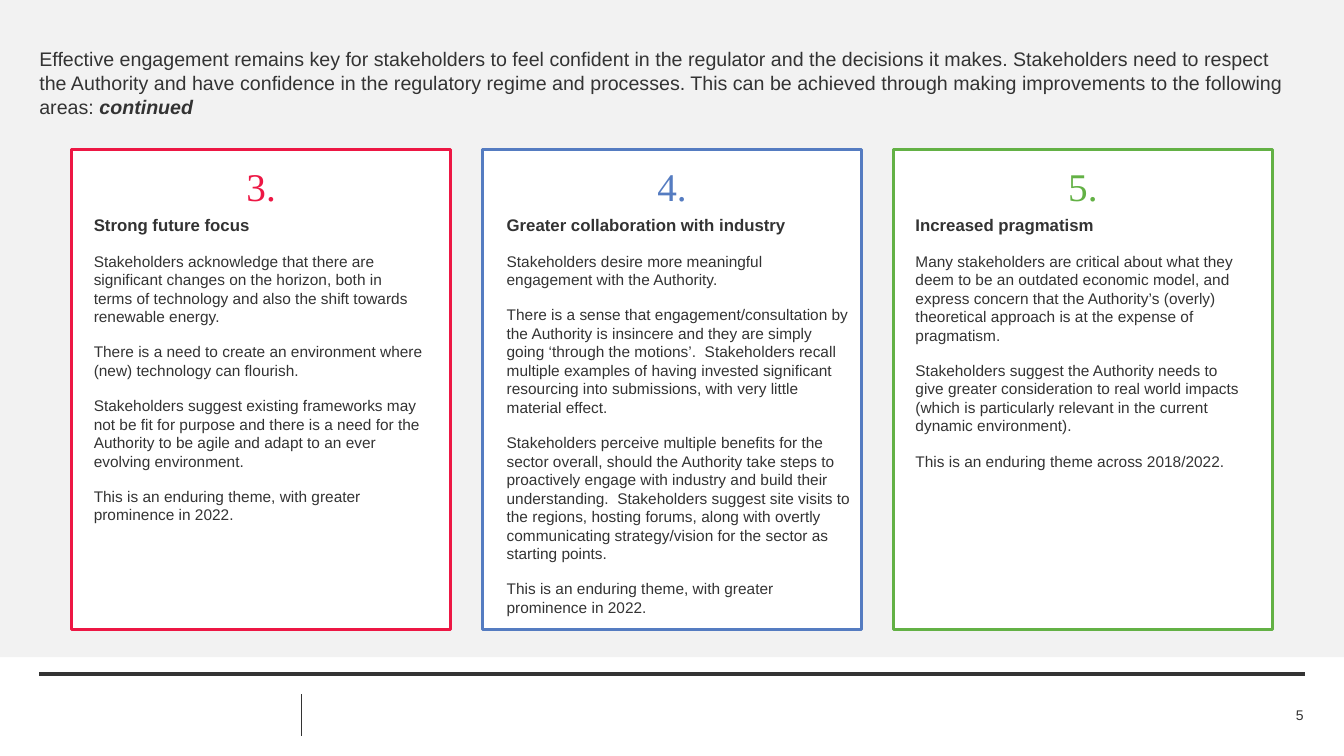
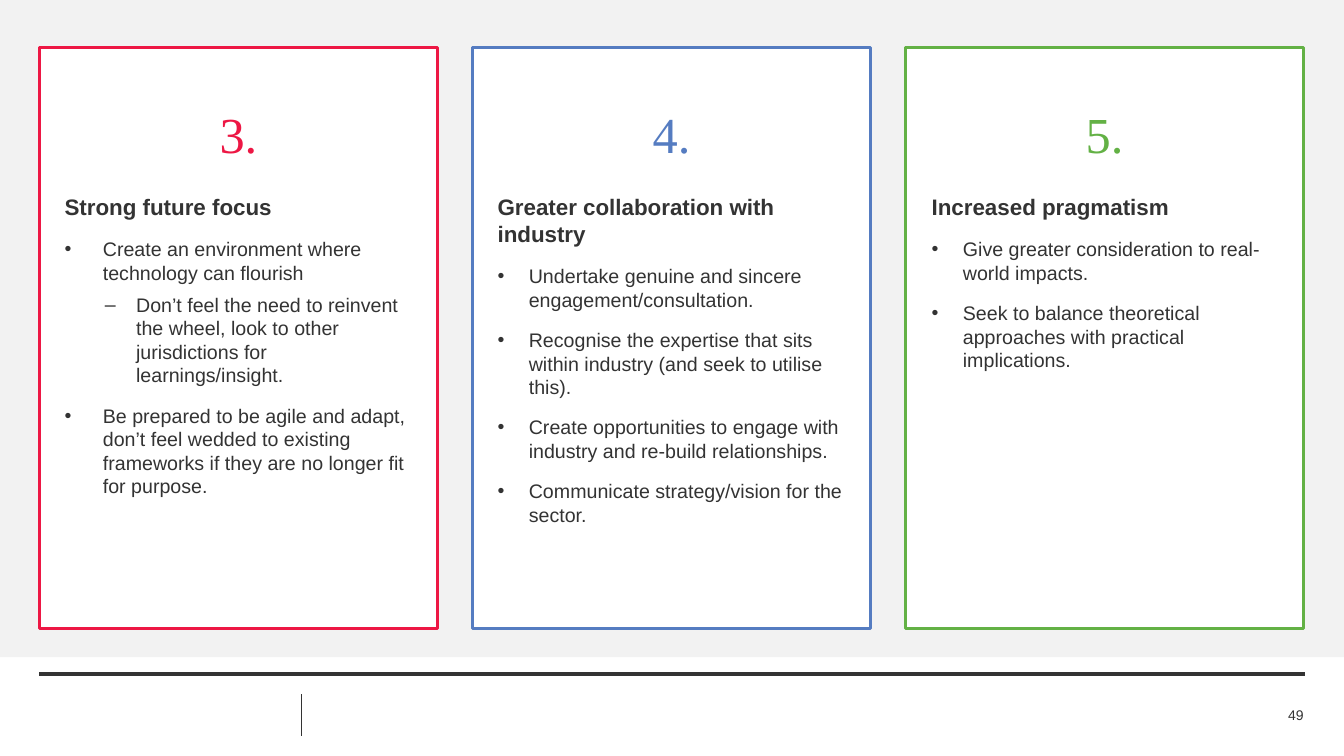
from dataclasses import dataclass
from lxml import etree
from pptx import Presentation
from pptx.dml.color import RGBColor
from pptx.enum import shapes, text
from pptx.oxml import ns
from pptx.util import Inches, Pt


@dataclass(frozen=True)
class Theme:
    ink: str = "333333"
    paper: str = "FFFFFF"
    band: str = "F2F2F2"
    accents: tuple = ("ED1744", "557CC1", "63B145")
    sans: str = "Arial"
    serif: str = "Times New Roman"
    intro_size: int = 14
    page_size: int = 10


THEME = Theme()
NUMBERS = ("3.", "4.", "5.")
HEADINGS = ("Strong future focus", "Greater collaboration with industry", "Increased pragmatism")
PLAIN, BULLET, WIDE_BULLET, DASH = "plain", "bullet", "wide bullet", "dash"
LIST_STYLES = {
    PLAIN: dict(margin=0, hang=0, mark=None, level=0, before=12),
    BULLET: dict(margin=0.31, hang=0.31, mark="•", level=0, before=12),
    WIDE_BULLET: dict(margin=0.38, hang=0.38, mark="•", level=0, before=12),
    DASH: dict(margin=0.71, hang=0.31, mark="‒", level=1, before=6),
}

INTRO = (
    "Effective engagement remains key for stakeholders to feel confident in the regulator and the "
    "decisions it makes. Stakeholders need to respect the Authority and have confidence in the "
    "regulatory regime and processes. This can be achieved through making improvements to the "
    "following areas: "
)
INTRO_END = "continued"
ENDURING = "This is an enduring theme, with greater prominence in 2022."

FINDINGS = [
    [
        (PLAIN, "Stakeholders acknowledge that there are significant changes on the horizon, both in "
                "terms of technology and also the shift towards renewable energy."),
        (PLAIN, "There is a need to create an environment where (new) technology can flourish."),
        (PLAIN, "Stakeholders suggest existing frameworks may not be fit for purpose and there is a "
                "need for the Authority to be agile and adapt to an ever evolving environment."),
        (PLAIN, ENDURING),
    ],
    [
        (PLAIN, "Stakeholders desire more meaningful engagement with the Authority."),
        (PLAIN, "There is a sense that engagement/consultation by the Authority is insincere and they "
                "are simply going ‘through the motions’.  Stakeholders recall multiple examples of "
                "having invested significant resourcing into submissions, with very little material "
                "effect."),
        (PLAIN, "Stakeholders perceive multiple benefits for the sector overall, should the Authority "
                "take steps to proactively engage with industry and build their understanding.  "
                "Stakeholders suggest site visits to the regions, hosting forums, along with overtly "
                "communicating strategy/vision for the sector as starting points."),
        (PLAIN, ENDURING),
    ],
    [
        (PLAIN, "Many stakeholders are critical about what they deem to be an outdated economic model, "
                "and express concern that the Authority’s (overly) theoretical approach is at the "
                "expense of pragmatism."),
        (PLAIN, "Stakeholders suggest the Authority needs to give greater consideration to real world "
                "impacts (which is particularly relevant in the current dynamic environment)."),
        (PLAIN, "This is an enduring theme across 2018/2022."),
    ],
]

ACTIONS = [
    [
        (WIDE_BULLET, "Create an environment where technology can flourish"),
        (DASH, "Don’t feel the need to reinvent the wheel, look to other jurisdictions for "
               "learnings/insight."),
        (WIDE_BULLET, "Be prepared to be agile and adapt, don’t feel wedded to existing frameworks if "
                      "they are no longer fit for purpose."),
    ],
    [
        (BULLET, "Undertake genuine and sincere engagement/consultation."),
        (BULLET, "Recognise the expertise that sits within industry (and seek to utilise this)."),
        (BULLET, "Create opportunities to engage with industry and re-build relationships."),
        (BULLET, "Communicate strategy/vision for the sector."),
    ],
    [
        (BULLET, "Give greater consideration to real-world impacts."),
        (BULLET, "Seek to balance theoretical approaches with practical implications."),
    ],
]

SLIDES = [
    dict(page="5", intro=True, columns=FINDINGS, left=0.71, right=12.62, top=1.48,
         card=(3.76, 4.77), number=(1.56, 0.62, 0.57), body_top=2.13, body_height=4.02,
         insets=(0.22, 0.24, 0.22), body_widths=(3.27, 3.43, 3.27),
         sizes=dict(number=28, heading=12, item=11)),
    dict(page="49", intro=False, columns=ACTIONS, left=0.39, right=12.93, top=0.47,
         card=(3.95, 5.77), number=(0.97, 0.81, 0.71), body_top=1.92, body_height=3.33,
         insets=(0.25, 0.25, 0.26), body_widths=(3.43, 3.43, 3.43),
         sizes=dict(number=36, heading=16, item=14)),
]


def rgb(value):
    return RGBColor.from_string(value)


def style(paragraph, size, color=THEME.ink, face=THEME.sans, bold=False):
    font = paragraph.font
    font.name, font.size, font.bold = face, Pt(size), bold
    font.color.rgb = rgb(color)


def place(part, left, top, width, height):
    part.left, part.top = Inches(left), Inches(top)
    part.width, part.height = Inches(width), Inches(height)


def prepare(frame, anchor=text.MSO_ANCHOR.TOP):
    frame.word_wrap = True
    frame.auto_size = text.MSO_AUTO_SIZE.NONE
    frame.vertical_anchor = anchor
    frame.margin_left = frame.margin_right = frame.margin_top = frame.margin_bottom = 0


def add_panel(slide, box, fill, outline=None):
    panel = slide.shapes.add_shape(shapes.MSO_SHAPE.RECTANGLE, *map(Inches, box))
    panel.shadow.inherit = False
    panel.fill.solid()
    panel.fill.fore_color.rgb = rgb(fill)
    if outline:
        panel.line.color.rgb = rgb(outline)
        panel.line.width = Pt(2.25)
    else:
        panel.line.fill.background()
    return panel


def add_rule(slide, ends, width):
    rule = slide.shapes.add_connector(shapes.MSO_CONNECTOR.STRAIGHT, *map(Inches, ends))
    rule.line.color.rgb = rgb(THEME.ink)
    rule.line.width = Pt(width)
    etree.SubElement(rule._element.spPr, ns.qn("a:effectLst"))
    return rule


def dress_master(prs, slide):
    parts = [
        add_panel(slide, (0, 0, 13.33, 6.52), THEME.band),
        add_rule(slide, (0.39, 6.69, 12.94, 6.69), 3),
        add_rule(slide, (2.99, 6.89, 2.99, 7.3), 1),
    ]
    for position, part in enumerate(parts):
        part._element.xpath(".//p:cNvPr")[0].set("id", str(100 + position))
        prs.slide_master.shapes._spTree.insert(2 + position, part._element)


def add_label(slide, box, label, size, color, face, align):
    frame = slide.shapes.add_textbox(*map(Inches, box)).text_frame
    prepare(frame, text.MSO_ANCHOR.MIDDLE)
    paragraph = frame.paragraphs[0]
    paragraph.text, paragraph.alignment = label, align
    style(paragraph, size, color, face)


def write_item(paragraph, kind, words, size, bold=False, first=False):
    rule = LIST_STYLES[kind]
    paragraph.text, paragraph.level = words, rule["level"]
    props = paragraph._p.get_or_add_pPr()
    props.set("marL", str(Inches(rule["margin"])))
    props.set("indent", str(-Inches(rule["hang"])))
    if rule["mark"]:
        etree.SubElement(props, ns.qn("a:buFont")).set("typeface", THEME.sans)
        etree.SubElement(props, ns.qn("a:buChar")).set("char", rule["mark"])
    else:
        etree.SubElement(props, ns.qn("a:buNone"))
    paragraph.alignment = text.PP_ALIGN.LEFT
    paragraph.space_before = Pt(0 if first else rule["before"])
    style(paragraph, size, bold=bold)


def write_intro(title):
    place(title, 0.39, 0.47, 12.48, 0.75)
    prepare(title.text_frame)
    paragraph = title.text_frame.paragraphs[0]
    paragraph.alignment = text.PP_ALIGN.LEFT
    style(paragraph, THEME.intro_size)
    paragraph.add_run().text = INTRO
    ending = paragraph.add_run()
    ending.text = INTRO_END
    ending.font.bold = ending.font.italic = True


def fill_column(slide, plan, column, body):
    width, height = plan["card"]
    pitch = (plan["right"] - plan["left"] - width) / (len(NUMBERS) - 1)
    left = plan["left"] + column * pitch
    accent, sizes = THEME.accents[column], plan["sizes"]
    add_panel(slide, (left, plan["top"], width, height), THEME.paper, accent)

    number_top, number_width, number_height = plan["number"]
    number_left = left + (width - number_width) / 2
    add_label(slide, (number_left, number_top, number_width, number_height), NUMBERS[column],
              sizes["number"], accent, THEME.serif, text.PP_ALIGN.CENTER)

    place(body, left + plan["insets"][column], plan["body_top"],
          plan["body_widths"][column], plan["body_height"])
    slide.shapes._spTree.append(body._element)
    frame = body.text_frame
    prepare(frame)
    write_item(frame.paragraphs[0], PLAIN, HEADINGS[column], sizes["heading"], bold=True, first=True)
    for kind, words in plan["columns"][column]:
        write_item(frame.add_paragraph(), kind, words, sizes["item"])


def build_slide(slide, plan):
    title, *bodies = slide.placeholders
    if plan["intro"]:
        write_intro(title)
    else:
        title._element.getparent().remove(title._element)
    for spare in bodies[len(NUMBERS):]:
        spare._element.getparent().remove(spare._element)
    for column, body in enumerate(bodies[:len(NUMBERS)]):
        fill_column(slide, plan, column, body)
    add_label(slide, (12.55, 6.99, 0.38, 0.21), plan["page"], THEME.page_size,
              THEME.ink, THEME.sans, text.PP_ALIGN.RIGHT)


def main():
    prs = Presentation()
    prs.slide_width, prs.slide_height = Inches(13.33), Inches(7.5)
    comparison = prs.slide_layouts.get_by_name("Comparison")
    pages = [prs.slides.add_slide(comparison) for plan in SLIDES]
    dress_master(prs, pages[0])
    for slide, plan in zip(pages, SLIDES):
        build_slide(slide, plan)
    prs.save("out.pptx")


if __name__ == "__main__":
    main()
